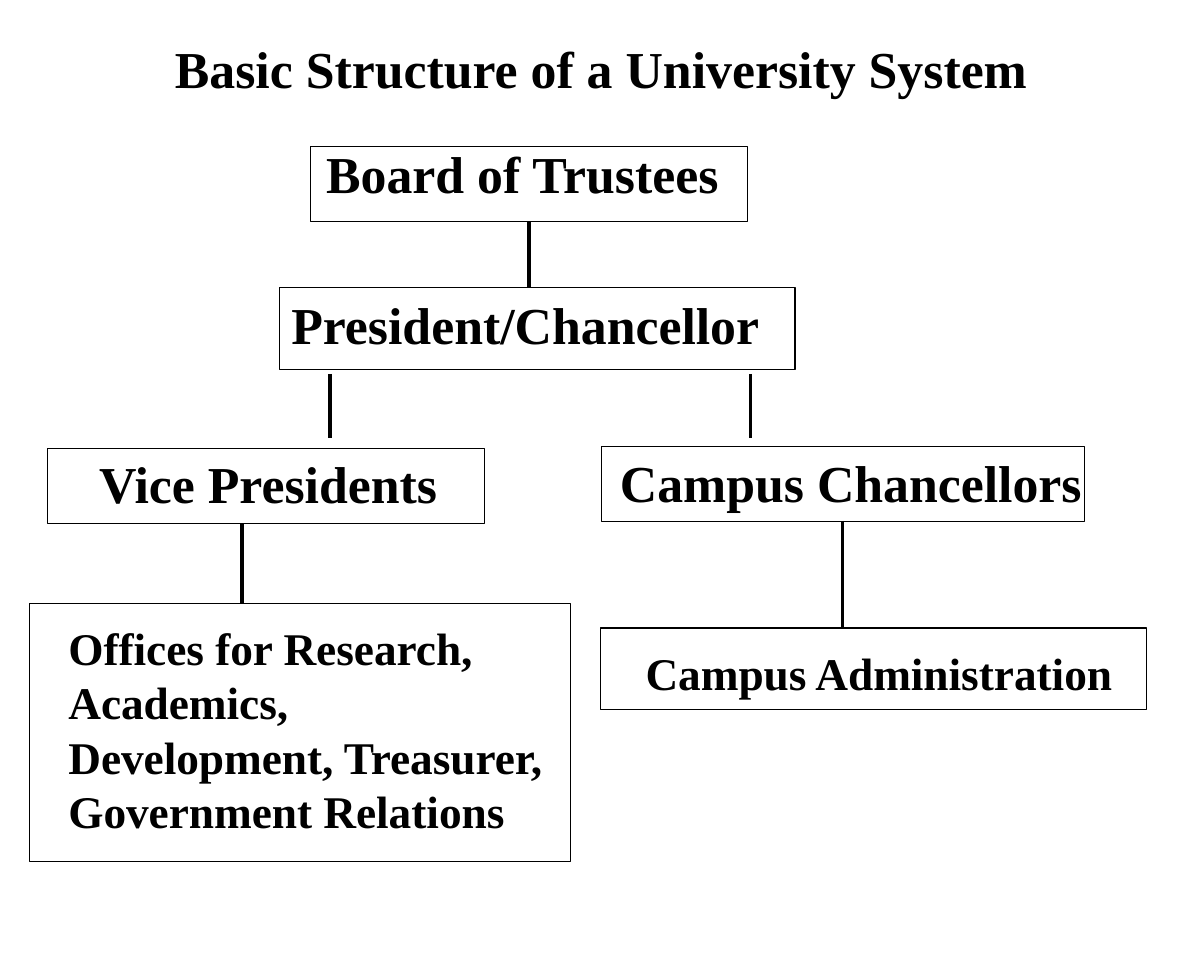
from dataclasses import dataclass

from lxml import etree
from pptx import Presentation
from pptx.dml.color import RGBColor
from pptx.enum.shapes import MSO_CONNECTOR, MSO_SHAPE
from pptx.enum.text import MSO_ANCHOR, MSO_AUTO_SIZE, PP_ALIGN
from pptx.oxml.ns import qn
from pptx.slide import Slide
from pptx.text.text import TextFrame
from pptx.util import Cm, Pt

RECTANGLE = MSO_SHAPE.RECTANGLE
STRAIGHT = MSO_CONNECTOR.STRAIGHT
MIDDLE = MSO_ANCHOR.MIDDLE
CENTER, LEFT = PP_ALIGN.CENTER, PP_ALIGN.LEFT
GROW = MSO_AUTO_SIZE.SHAPE_TO_FIT_TEXT


@dataclass(frozen=True)
class Theme:
    font: str = "Times New Roman"
    ink: RGBColor = RGBColor(0x00, 0x00, 0x00)
    large: float = 32
    small: float = 28
    border: float = 0.75
    link: float = 2.25


@dataclass(frozen=True)
class Area:
    left: float
    top: float
    width: float
    height: float

    def lengths(self) -> tuple[Cm, Cm, Cm, Cm]:
        return Cm(self.left), Cm(self.top), Cm(self.width), Cm(self.height)


@dataclass(frozen=True)
class Unit:
    label: str
    frame: Area
    text: Area
    size: float


@dataclass(frozen=True)
class Link:
    x: float
    top: float
    bottom: float


THEME = Theme()
TITLE = "Basic Structure of a University System"
TITLE_AREA = Area(1.96, -0.28, 22.3, 3.51)

UNITS = [
    Unit("Board of Trustees", Area(6.76, 3.2, 9.53, 1.63),
         Area(6.86, 2.97, 11.23, 1.63), THEME.large),
    Unit("President/Chancellor", Area(6.1, 6.27, 11.23, 1.78),
         Area(6.1, 6.25, 11.23, 1.63), THEME.large),
    Unit("Vice Presidents", Area(1.04, 9.78, 9.53, 1.63),
         Area(1.91, 9.73, 8.26, 1.63), THEME.large),
    Unit("Campus Chancellors", Area(13.11, 9.73, 10.52, 1.63),
         Area(13.26, 9.7, 11.23, 1.63), THEME.large),
    Unit("Campus Administration", Area(13.08, 13.69, 11.91, 1.78),
         Area(13.82, 13.94, 11.23, 1.45), THEME.small),
    Unit("Offices for Research, Academics, Development, Treasurer, "
         "Government Relations", Area(0.64, 13.16, 11.79, 5.61),
         Area(1.24, 13.39, 11.23, 5.05), THEME.small),
]

LINKS = [
    Link(11.53, 4.83, 6.25),
    Link(7.19, 8.15, 9.55),
    Link(16.36, 8.15, 9.55),
    Link(5.28, 11.4, 13.16),
    Link(18.36, 11.35, 13.69),
]


def write(tf: TextFrame, text: str, size: float, align: PP_ALIGN) -> None:
    tf.text = text
    tf.word_wrap = True
    p = tf.paragraphs[0]
    p.alignment = align
    font = p.runs[0].font
    font.name, font.size, font.bold = THEME.font, Pt(size), True
    font.color.rgb = THEME.ink


def add_title(s: Slide) -> None:
    sp = s.shapes.title
    sp.left, sp.top, sp.width, sp.height = TITLE_AREA.lengths()
    write(sp.text_frame, TITLE, THEME.large, CENTER)
    sp.text_frame.vertical_anchor = MIDDLE


def add_unit(s: Slide, unit: Unit) -> None:
    group = s.shapes.add_group_shape()
    sp = group.shapes.add_shape(RECTANGLE, *unit.frame.lengths())
    sp.shadow.inherit = False
    sp.fill.background()
    sp.line.color.rgb = THEME.ink
    sp.line.width = Pt(THEME.border)

    tf = group.shapes.add_textbox(*unit.text.lengths()).text_frame
    write(tf, unit.label, unit.size, LEFT)
    tf.auto_size = GROW


def add_link(s: Slide, link: Link) -> None:
    x = Cm(link.x)
    line = s.shapes.add_connector(STRAIGHT, x, Cm(link.top), x, Cm(link.bottom))
    line.line.color.rgb = THEME.ink
    line.line.width = Pt(THEME.link)
    etree.SubElement(line._element.spPr, qn("a:effectLst"))


def main() -> None:
    prs = Presentation()
    prs.slide_width, prs.slide_height = Cm(26.24), Cm(21.01)
    s = prs.slides.add_slide(prs.slide_layouts[5])

    # Heading
    add_title(s)

    # Offices and the lines of authority between them
    for unit in UNITS:
        add_unit(s, unit)
    for link in LINKS:
        add_link(s, link)

    prs.save("out.pptx")


if __name__ == "__main__":
    main()
